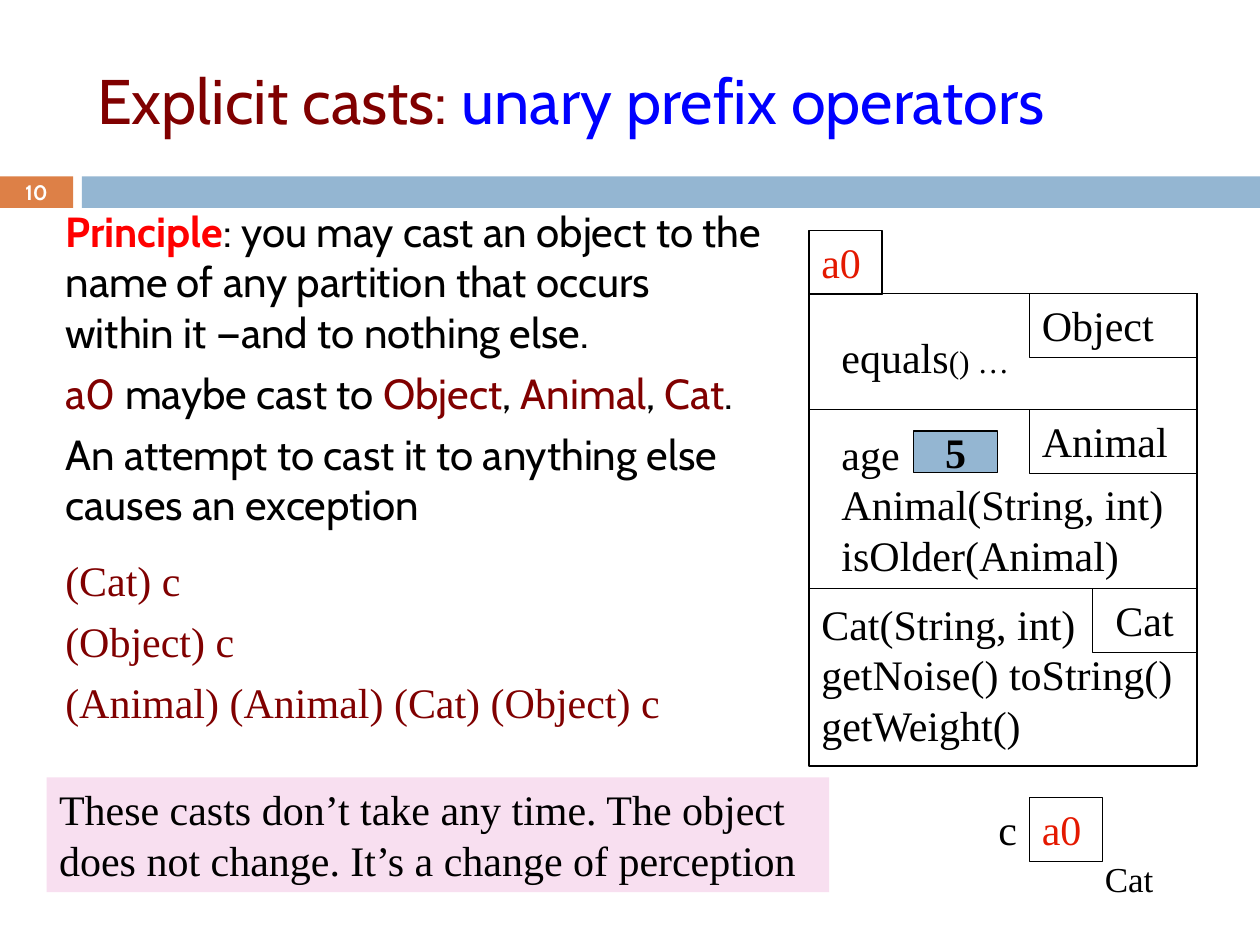
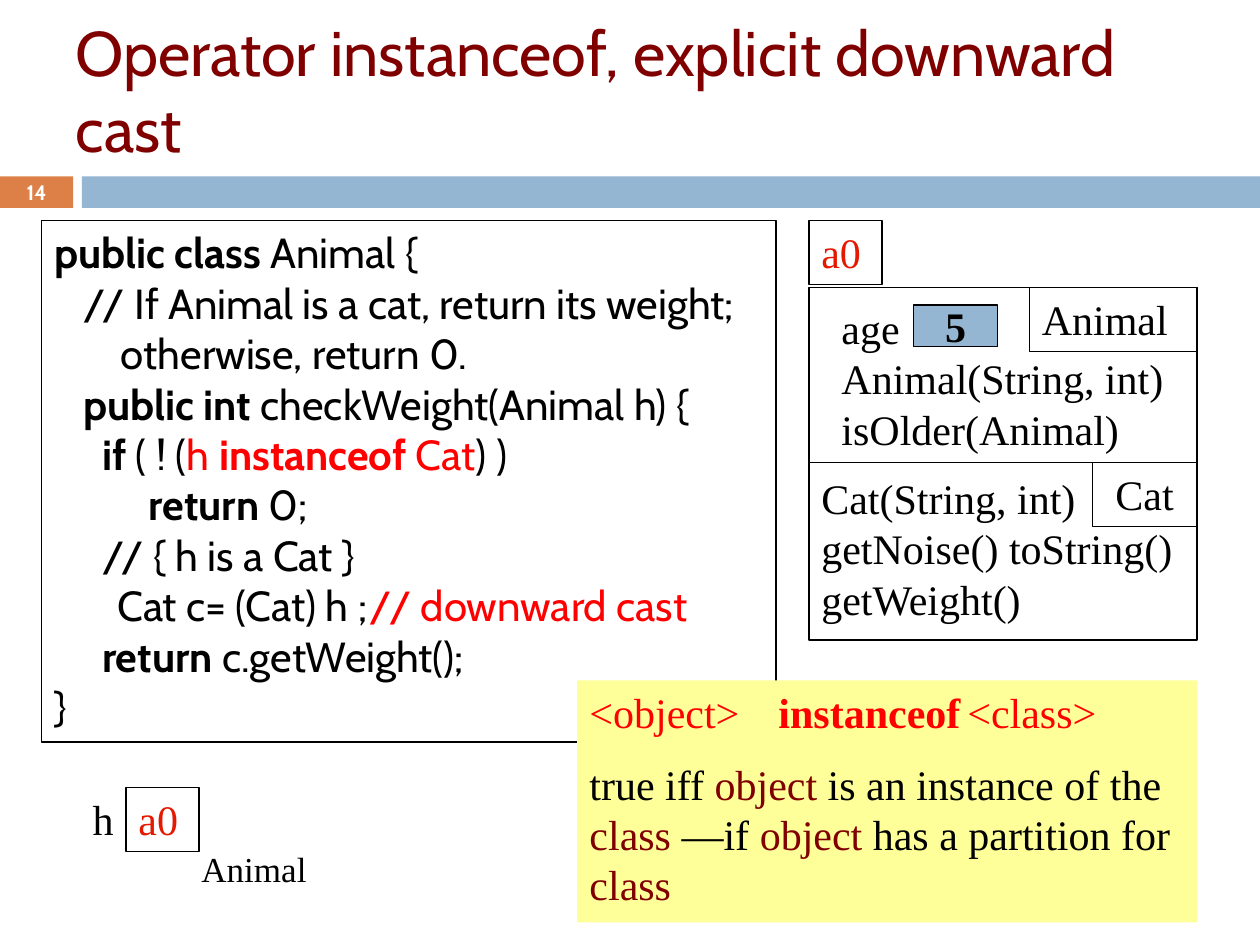
from lxml import etree
from pptx import Presentation
from pptx.dml.color import RGBColor
from pptx.enum.shapes import MSO_CONNECTOR, MSO_SHAPE
from pptx.enum.text import MSO_ANCHOR, MSO_AUTO_SIZE, PP_ALIGN
from pptx.oxml.ns import qn
from pptx.util import Inches, Pt

LEFT, CENTER, RIGHT = PP_ALIGN.LEFT, PP_ALIGN.CENTER, PP_ALIGN.RIGHT
TOP, MIDDLE = MSO_ANCHOR.TOP, MSO_ANCHOR.MIDDLE
RECTANGLE, STRAIGHT = MSO_SHAPE.RECTANGLE, MSO_CONNECTOR.STRAIGHT
NO_AUTOFIT = MSO_AUTO_SIZE.NONE

SANS, SERIF = "Cabin", "Times New Roman"
BLACK, WHITE, MAROON, RED, BLUE = "000000", "FFFFFF", "800000", "FF0000", "0000FF"
NAME_RED, ORANGE, BAND_BLUE, PINK, YELLOW = "E41900", "DD8047", "94B6D2", "F8DFF0", "FFFF99"

PRINCIPLE = [
    {"spans": [("Principle", RED, True),
               (": you may cast an object to the name of any partition that occurs "
                "within it —and to nothing else.",)]},
    {"spans": [("a0", MAROON), (" maybe cast to ",), ("Object", MAROON), (", ",),
               ("Animal", MAROON), (", ",), ("Cat", MAROON), (".",)], "before": 6},
    {"spans": [("An attempt to cast it to anything else causes an exception",)], "before": 6},
]
CASTS = [
    {"spans": [("(Cat) c", MAROON)]},
    {"spans": [("(Object) c", MAROON)], "before": 6},
    {"spans": [("(Animal) (Animal) (Cat) (Object) c", MAROON)], "before": 6},
]
CAST_NOTE = [{"spans": [("These casts don’t take any time. The object does not change. "
                         "It’s a change of perception",)]}]
CODE = [
    {"spans": [("public class", BLACK, True), (" Animal {",)]},
    {"spans": [("// If Animal is a cat, return its weight;",)], "indent": 0.23},
    {"spans": [("otherwise, return 0.",)], "indent": 0.53},
    {"spans": [("public int ", BLACK, True), ("checkWeight(Animal h) {",)], "indent": 0.23},
    {"spans": [("if ", BLACK, True), ("( ! (",), ("h ", RED), ("instanceof", RED, True),
               (" Cat", RED), (") )",)], "indent": 0.38},
    {"spans": [("return ", BLACK, True), ("0;",)], "indent": 0.75},
    {"spans": [("// { h is a Cat }",)], "indent": 0.38},
    {"spans": [("\tCat c= (Cat) h ;\t",), ("// downward cast", RED)], "tabs": [0.38, 2.52]},
    {"spans": [("return ", BLACK, True), ("c.getWeight();",)], "indent": 0.38},
    {"spans": [("}",)]},
]
INSTANCEOF = [
    {"spans": [("<object>\t", RED), ("instanceof\t", RED, True), ("<class>", RED)],
     "tabs": [1.45, 3.15]},
    {"spans": [("true iff ",), ("object", MAROON), (" is an instance of the ",),
               ("class", MAROON), (" —if ",), ("object", MAROON),
               (" has a partition for ",), ("class", MAROON)], "before": 12},
]

PARTITIONS = {
    "Object": {"tag_width": 1.33, "align": LEFT, "inset": 0.16, "width": 1.58, "rise": 0.67,
               "lines": [[("equals",), ("() …", BLACK, False, 18)]]},
    "Animal": {"tag_width": 1.33, "align": LEFT, "inset": 0.16, "width": 2.92, "rise": 1.32,
               "lines": [[("age",)], [("Animal(String, int)",)], [("isOlder(Animal)",)]],
               "age": "5"},
    "Cat": {"tag_width": 0.83, "align": CENTER, "inset": 0, "width": 3.08, "rise": 1.38,
            "lines": [[("Cat(String, int)",)], [("getNoise() toString()",)],
                      [("getWeight()",)]]},
}
OBJECT_LEFT, OBJECT_WIDTH = 6.42, 3.08
NAME_WIDTH, TAG_HEIGHT = 0.58, 0.51

SLIDES = [
    {"number": "10", "title_at": (0.67, 0.25, 8.92, 1.08),
     "title": [("Explicit casts: ", MAROON), ("unary prefix operators", BLUE)],
     "body": PRINCIPLE, "body_at": (0.42, 1.58, 5.75, 2.69), "body_line": None,
     "object": {"name_top": 1.83, "top": 2.33,
                "heights": {"Object": 0.92, "Animal": 1.42, "Cat": 1.41}},
     "variable": ("c", "Cat", 7.75, 6.33, 0.67),
     "notes": [(CASTS, (0.42, 4.35, 5.2, 1.48), None),
               (CAST_NOTE, (0.37, 6.17, 6.21, 0.91), PINK)]},
    {"number": "14", "title_at": (0.5, 0.25, 9.09, 0.92),
     "title": [("Operator instanceof, explicit downward cast", MAROON)],
     "body": CODE, "body_at": (0.33, 1.75, 5.83, 4.14), "body_line": BLACK,
     "object": {"name_top": 1.75, "top": 2.28, "heights": {"Animal": 1.39, "Cat": 1.41}},
     "variable": ("h", "Animal", 0.58, 6.25, 1.08),
     "notes": [(INSTANCEOF, (4.58, 5.4, 4.92, 1.92), YELLOW)]},
]


def color(value):
    return RGBColor.from_string(value)


def place(box, at):
    for name, length in zip(("left", "top", "width", "height"), at):
        setattr(box, name, Inches(length))


def paint(box, fill=None, line=None):
    if fill:
        box.fill.solid()
        box.fill.fore_color.rgb = color(fill)
    else:
        box.fill.background()
    if line:
        box.line.color.rgb = color(line)
        box.line.width = Pt(0.75)
    else:
        box.line.fill.background()


def format_indents(para, indent, tabs):
    properties = para._p.get_or_add_pPr()
    properties.set("marL", str(Inches(indent)))
    properties.set("indent", "0")
    etree.SubElement(properties, qn("a:buNone"))
    if tabs:
        tab_list = etree.SubElement(properties, qn("a:tabLst"))
        for position in tabs:
            etree.SubElement(tab_list, qn("a:tab"), pos=str(Inches(position)), algn="l")


def write(box, paragraphs, font=SERIF, size=24, align=LEFT, anchor=TOP, margin=None):
    frame = box.text_frame
    settings = {"word_wrap": True, "auto_size": NO_AUTOFIT, "vertical_anchor": anchor}
    if margin is not None:
        settings.update(dict.fromkeys(
            ("margin_left", "margin_top", "margin_right", "margin_bottom"), Inches(margin)))
    for name, value in settings.items():
        setattr(frame, name, value)
    for index, content in enumerate(paragraphs):
        para = frame.paragraphs[0] if index == 0 else frame.add_paragraph()
        layout = {"alignment": align, "line_spacing": Pt(size * 1.2),
                  "space_before": Pt(content.get("before", 0)), "space_after": Pt(0)}
        for name, value in layout.items():
            setattr(para, name, value)
        format_indents(para, content.get("indent", 0), content.get("tabs"))
        for text, *style in content["spans"]:
            ink, bold, span_size = style + [BLACK, False, size][len(style):]
            span = para.add_run()
            span.text = text
            formats = {"name": font, "size": Pt(span_size), "bold": bold}
            for name, value in formats.items():
                setattr(span.font, name, value)
            span.font.color.rgb = color(ink)


def add_box(slide, at, fill=None, line=None):
    box = slide.shapes.add_shape(RECTANGLE, *map(Inches, at))
    box.shadow.inherit = False
    paint(box, fill, line)
    return box


def add_text(slide, at, paragraphs, **options):
    box = slide.shapes.add_textbox(*map(Inches, at))
    write(box, paragraphs, **options)


def add_label_box(slide, at, text, ink=BLACK, **options):
    write(add_box(slide, at, line=BLACK), [{"spans": [(text, ink)]}], **options)


def add_divider(slide, top):
    divider = slide.shapes.add_connector(
        STRAIGHT, *map(Inches, (OBJECT_LEFT, top, OBJECT_LEFT + OBJECT_WIDTH, top)))
    divider.line.color.rgb = color(BLACK)
    divider.line.width = Pt(0.75)
    etree.SubElement(divider._element.spPr, qn("a:effectLst"))


def add_object(slide, name_top, top, heights):
    add_box(slide, (OBJECT_LEFT, top, OBJECT_WIDTH, sum(heights.values())), line=BLACK)
    add_label_box(slide, (OBJECT_LEFT, name_top, NAME_WIDTH, TAG_HEIGHT), "a0", NAME_RED)
    partition_top = top
    for name, height in heights.items():
        part = PARTITIONS[name]
        if partition_top > top:
            add_divider(slide, partition_top)
        tag_left = OBJECT_LEFT + OBJECT_WIDTH - part["tag_width"]
        add_label_box(slide, (tag_left, partition_top, part["tag_width"], TAG_HEIGHT), name,
                      align=part["align"])
        bottom = partition_top + height
        add_text(slide, (OBJECT_LEFT + part["inset"], bottom - part["rise"], part["width"],
                         0.1 + 0.4 * len(part["lines"])),
                 [{"spans": line} for line in part["lines"]])
        if "age" in part:
            age_box = add_box(slide, (7.25, bottom - 1.25, 0.67, 0.33), BAND_BLUE, BLACK)
            write(age_box, [{"spans": [(part["age"], BLACK, True)]}],
                  align=CENTER, anchor=MIDDLE, margin=0)
        partition_top = bottom


def add_variable(slide, name, type_name, left, top, type_width):
    add_text(slide, (left, top, 0.42, 0.5), [{"spans": [(name,)]}], align=RIGHT)
    add_label_box(slide, (left + 0.42, top, NAME_WIDTH, TAG_HEIGHT), "a0", NAME_RED)
    add_text(slide, (left + 0.92, top + 0.43, type_width, 0.43),
             [{"spans": [(type_name,)]}], size=20)


def add_bands(slide, number):
    number_box = add_box(slide, (0, 1.4, 0.58, 0.25), ORANGE)
    write(number_box, [{"spans": [(number, WHITE, True)]}], font=SANS, size=12,
          align=CENTER, anchor=MIDDLE, margin=0)
    add_box(slide, (0.65, 1.4, 9.35, 0.25), BAND_BLUE)


def build_slide(deck, content):
    slide = deck.slides.add_slide(deck.slide_layouts[1])
    add_bands(slide, content["number"])
    title, body = slide.shapes.title, slide.placeholders[1]
    place(title, content["title_at"])
    write(title, [{"spans": content["title"]}], font=SANS, size=36, anchor=MIDDLE)
    place(body, content["body_at"])
    paint(body, line=content["body_line"])
    write(body, content["body"], font=SANS)
    add_object(slide, **content["object"])
    add_variable(slide, *content["variable"])
    for paragraphs, at, fill in content["notes"]:
        if fill:
            write(add_box(slide, at, fill), paragraphs)
        else:
            add_text(slide, at, paragraphs)


def main():
    deck = Presentation()
    deck.slide_width, deck.slide_height = Inches(10), Inches(7.5)
    for content in SLIDES:
        build_slide(deck, content)
    deck.save("out.pptx")


if __name__ == "__main__":
    main()
